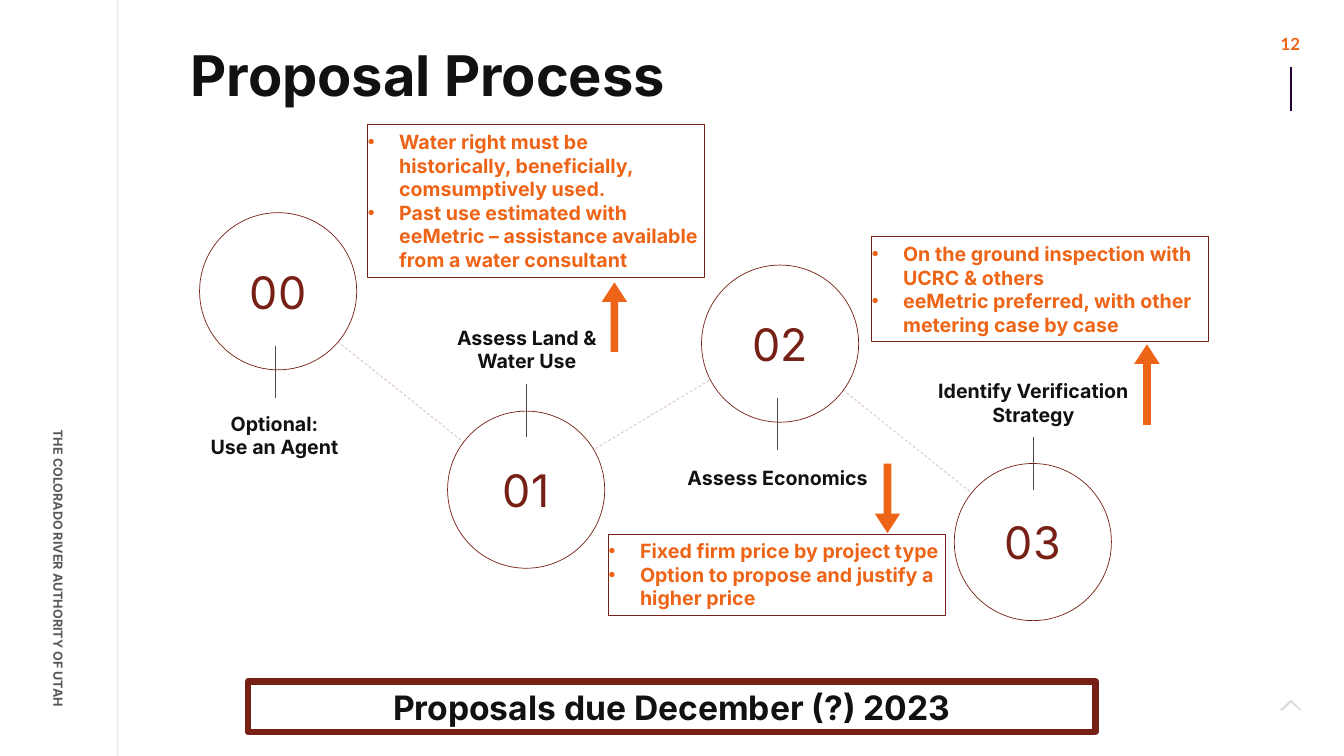
from dataclasses import dataclass

from lxml import etree
from pptx import Presentation
from pptx.dml.color import RGBColor
from pptx.enum.dml import MSO_LINE
from pptx.enum.shapes import MSO_CONNECTOR, MSO_SHAPE
from pptx.enum.text import MSO_ANCHOR, MSO_AUTO_SIZE, PP_ALIGN
from pptx.oxml.ns import qn
from pptx.util import Cm, Pt

DASH = MSO_LINE.DASH
STRAIGHT = MSO_CONNECTOR.STRAIGHT
OVAL, RECT, ARROW = MSO_SHAPE.OVAL, MSO_SHAPE.RECTANGLE, MSO_SHAPE.RIGHT_ARROW
TOP, MIDDLE = MSO_ANCHOR.TOP, MSO_ANCHOR.MIDDLE
FIT = MSO_AUTO_SIZE.SHAPE_TO_FIT_TEXT
LEFT, CENTER, RIGHT = PP_ALIGN.LEFT, PP_ALIGN.CENTER, PP_ALIGN.RIGHT

COLORS = {
    "ink": "111111",
    "maroon": "772116",
    "orange": "EE6417",
    "gray": "49494B",
    "violet": "220033",
    "white": "FFFFFF",
}
CIRCLE = 3.96
TICK = 1.32
CALLOUT_WIDTH = 8.48
ARROW_WIDTH = 0.64
BULLET_INDENT = Cm(0.79)


@dataclass
class Step:
    number: str
    circle: tuple[float, float]
    tick: tuple[float, float]
    label: list[str]
    label_box: tuple[float, float, float, float]
    wrap: bool


@dataclass
class Callout:
    x: float
    y: float
    height: float
    bullets: list[str]


@dataclass
class Arrow:
    x: float
    y: float
    length: float
    rotation: int


@dataclass
class Line:
    start: tuple[float, float]
    end: tuple[float, float]
    color: str
    width: float
    opacity: int = 100
    dash: MSO_LINE | None = None


STEPS = [
    Step("00", (5.03, 5.36), (6.93, 8.71), ["Optional:", "Use an Agent"],
         (5.28, 10.24, 3.28, 1.45), False),
    Step("01", (11.28, 10.36), (13.26, 9.68), ["Assess Land & Water Use"],
         (11.02, 8.08, 4.52, 1.45), True),
    Step("02", (17.68, 6.68), (19.58, 10.03), ["Assess Economics"],
         (17.3, 11.61, 4.6, 0.86), False),
    Step("03", (24.05, 11.68), (26.04, 11.02), ["Identify Verification Strategy"],
         (23.29, 9.42, 5.51, 1.45), True),
]
CALLOUTS = [
    Callout(9.27, 3.15, 3.84, [
        "Water right must be historically, beneficially, comsumptively used.",
        "Past use estimated with eeMetric – assistance available from a water consultant"]),
    Callout(21.97, 5.97, 2.64, [
        "On the ground inspection with UCRC & others",
        "eeMetric preferred, with other metering case by case"]),
    Callout(15.34, 13.46, 2.06, [
        "Fixed firm price by project type",
        "Option to propose and justify a higher price"]),
]
ARROWS = [
    Arrow(14.61, 7.67, 1.75, 270),
    Arrow(27.89, 9.37, 2.03, 270),
    Arrow(21.49, 12.24, 1.75, 90),
]
LINES = [
    Line((2.97, 0), (2.97, 19.05), "gray", 0.5, 20),
    Line((32.54, 1.7), (32.54, 2.79), "violet", 1.5),
    Line((6.93, 7.34), (13.28, 12.42), "maroon", 0.5, 30, DASH),
    Line((13.28, 12.34), (19.63, 8.53), "maroon", 0.5, 30, DASH),
    Line((19.66, 8.56), (26.01, 13.64), "maroon", 0.5, 30, DASH),
]
CHEVRON = [(32.54, 17.63), (32.79, 17.88), (32.77, 17.91),
           (32.54, 17.7), (32.31, 17.91), (32.26, 17.88)]


def rgb(name: str) -> RGBColor:
    return RGBColor.from_string(COLORS[name])


def set_opacity(shape, percent: int) -> None:
    for color in shape.element.iter(qn("a:srgbClr")):
        etree.SubElement(color, qn("a:alpha")).set("val", str(percent * 1000))


def add_bullet(p) -> None:
    pPr = p._p.get_or_add_pPr()
    pPr.set("marL", str(BULLET_INDENT))
    pPr.set("indent", str(-BULLET_INDENT))
    etree.SubElement(pPr, qn("a:buFont")).set("typeface", "Arial")
    etree.SubElement(pPr, qn("a:buChar")).set("char", "•")


def write(shape, texts: list[str], size: int, color: str, bold: bool = True,
          font: str = "Inter", align=CENTER, anchor=TOP, wrap: bool = True,
          inset: tuple[float, float] = (0, 0.13), fit: bool = False,
          bullets: bool = False, spacing: float | None = None) -> None:
    tf = shape.text_frame
    frame = {"word_wrap": wrap, "vertical_anchor": anchor,
             "margin_left": Cm(inset[0]), "margin_right": Cm(inset[0]),
             "margin_top": Cm(inset[1]), "margin_bottom": Cm(inset[1])}
    if fit:
        frame["auto_size"] = FIT
    for name, value in frame.items():
        setattr(tf, name, value)
    for i, text in enumerate(texts):
        p = tf.paragraphs[0] if i == 0 else tf.add_paragraph()
        p.alignment = align
        if spacing:
            p.line_spacing = spacing
        if bullets:
            add_bullet(p)
        r = p.add_run()
        r.text = text
        for name, value in {"name": font, "size": Pt(size), "bold": bold}.items():
            setattr(r.font, name, value)
        r.font.color.rgb = rgb(color)


def add_text(s, box: tuple[float, float, float, float], texts: list[str],
             size: int, color: str, **style):
    sp = s.shapes.add_textbox(*map(Cm, box))
    write(sp, texts, size, color, **style)
    return sp


def paint(sp, fill: str | None, line: str | None, width: float = 0.5) -> None:
    sp.shadow.inherit = False
    if fill:
        sp.fill.solid()
        sp.fill.fore_color.rgb = rgb(fill)
    else:
        sp.fill.background()
    if line:
        sp.line.color.rgb = rgb(line)
        sp.line.width = Pt(width)
    else:
        sp.line.fill.background()


def add_shape(s, kind, box: tuple[float, float, float, float],
              fill: str | None, line: str | None, width: float = 0.5):
    sp = s.shapes.add_shape(kind, *map(Cm, box))
    paint(sp, fill, line, width)
    return sp


def draw_line(s, line: Line) -> None:
    c = s.shapes.add_connector(STRAIGHT, *map(Cm, line.start + line.end))
    c.line.color.rgb = rgb(line.color)
    c.line.width = Pt(line.width)
    if line.dash:
        c.line.dash_style = line.dash
    if line.opacity < 100:
        set_opacity(c, line.opacity)
    etree.SubElement(c.element.spPr, qn("a:effectLst"))


def draw_chevron(s) -> None:
    points = [(Cm(x), Cm(y)) for x, y in CHEVRON]
    builder = s.shapes.build_freeform(*points[0])
    builder.add_line_segments(points[1:], close=True)
    sp = builder.convert_to_shape()
    paint(sp, "gray", None)
    set_opacity(sp, 20)


def draw_step(s, step: Step) -> None:
    sp = add_shape(s, OVAL, (*step.circle, CIRCLE, CIRCLE), "white", "maroon")
    write(sp, [step.number], 32, "maroon", bold=False, anchor=MIDDLE, inset=(0, 0))
    add_text(s, step.label_box, step.label, 14, "ink", wrap=step.wrap, fit=True)
    x, y = step.tick
    draw_line(s, Line((x, y), (x, y + TICK), "gray", 0.5))


def draw_callout(s, callout: Callout) -> None:
    box = (callout.x, callout.y, CALLOUT_WIDTH, callout.height)
    sp = add_shape(s, RECT, box, None, "maroon", 0.75)
    write(sp, callout.bullets, 14, "orange", align=LEFT, fit=True, bullets=True)


def draw_arrow(s, arrow: Arrow) -> None:
    box = (arrow.x, arrow.y, arrow.length, ARROW_WIDTH)
    sp = add_shape(s, ARROW, box, "orange", None)
    sp.rotation = arrow.rotation
    sp.adjustments[0], sp.adjustments[1] = 0.3, 0.77


def main() -> None:
    prs = Presentation()
    prs.slide_width, prs.slide_height = Cm(33.87), Cm(19.05)
    s = prs.slides.add_slide(prs.slide_layouts[6])
    sidebar = add_text(s, (-2.13, 13.89, 7.21, 0.64),
                       ["THE COLORADO RIVER AUTHORITY OF UTAH"], 9, "ink",
                       align=RIGHT, fit=True)
    sidebar.rotation = 90
    set_opacity(sidebar, 70)
    for line in LINES:
        draw_line(s, line)
    draw_chevron(s)
    add_text(s, (31.62, 0.66, 1.8, 0.91), ["12"], 12, "orange", font="Lato",
             anchor=MIDDLE, wrap=False, inset=(0.33, 0.18))
    add_text(s, (4.8, 1.09, 16.03, 3.96), ["Proposal Process"], 40, "ink",
             align=LEFT, spacing=0.9)
    for step in STEPS:
        draw_step(s, step)
    for callout in CALLOUTS:
        draw_callout(s, callout)
    for arrow in ARROWS:
        draw_arrow(s, arrow)
    banner = add_shape(s, RECT, (6.25, 17.17, 21.36, 1.27), None, "maroon", 4.5)
    write(banner, ["Proposals due December (?) 2023"], 24, "ink",
          anchor=MIDDLE, inset=(0.25, 0.13), fit=True)
    prs.save("out.pptx")


if __name__ == "__main__":
    main()
